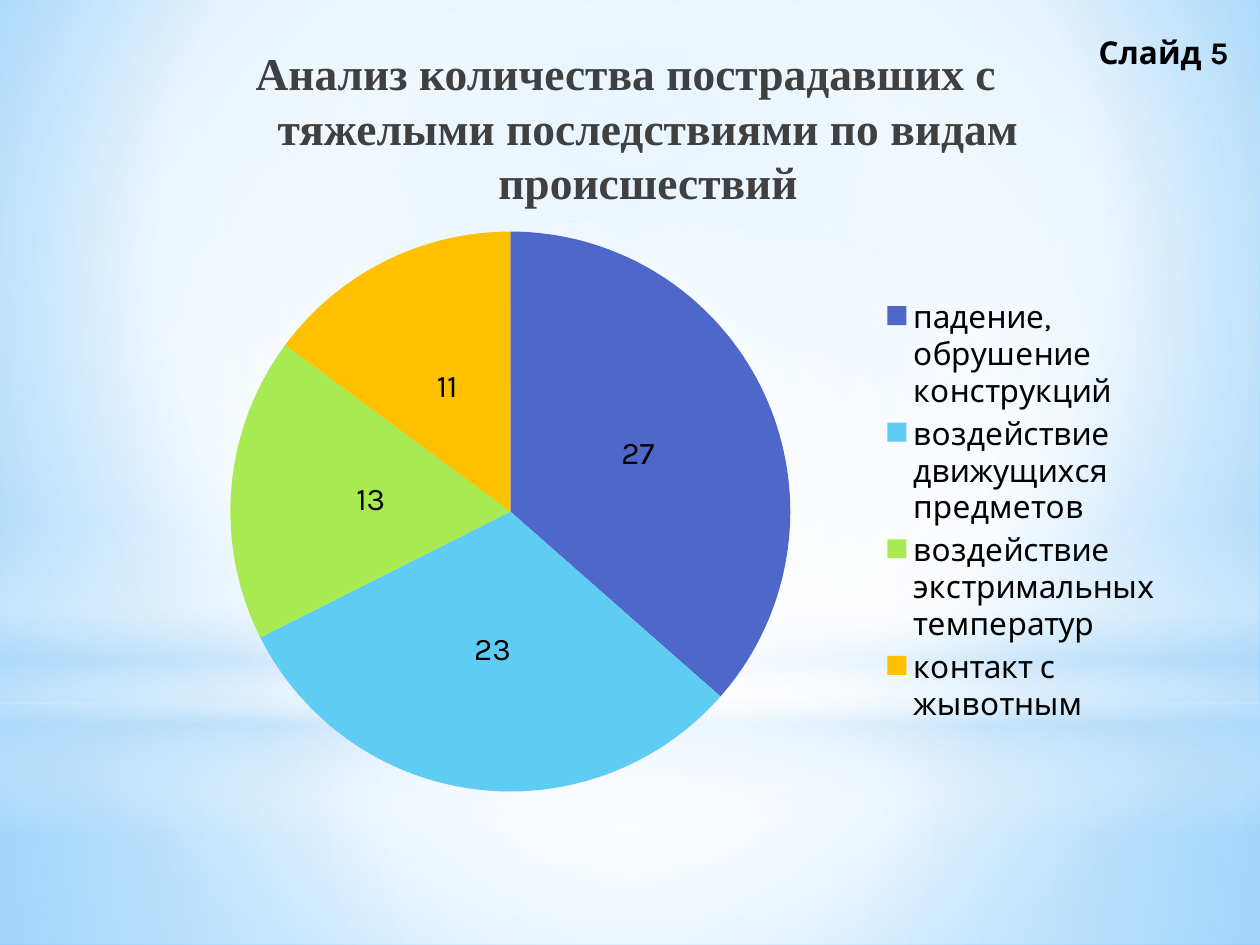
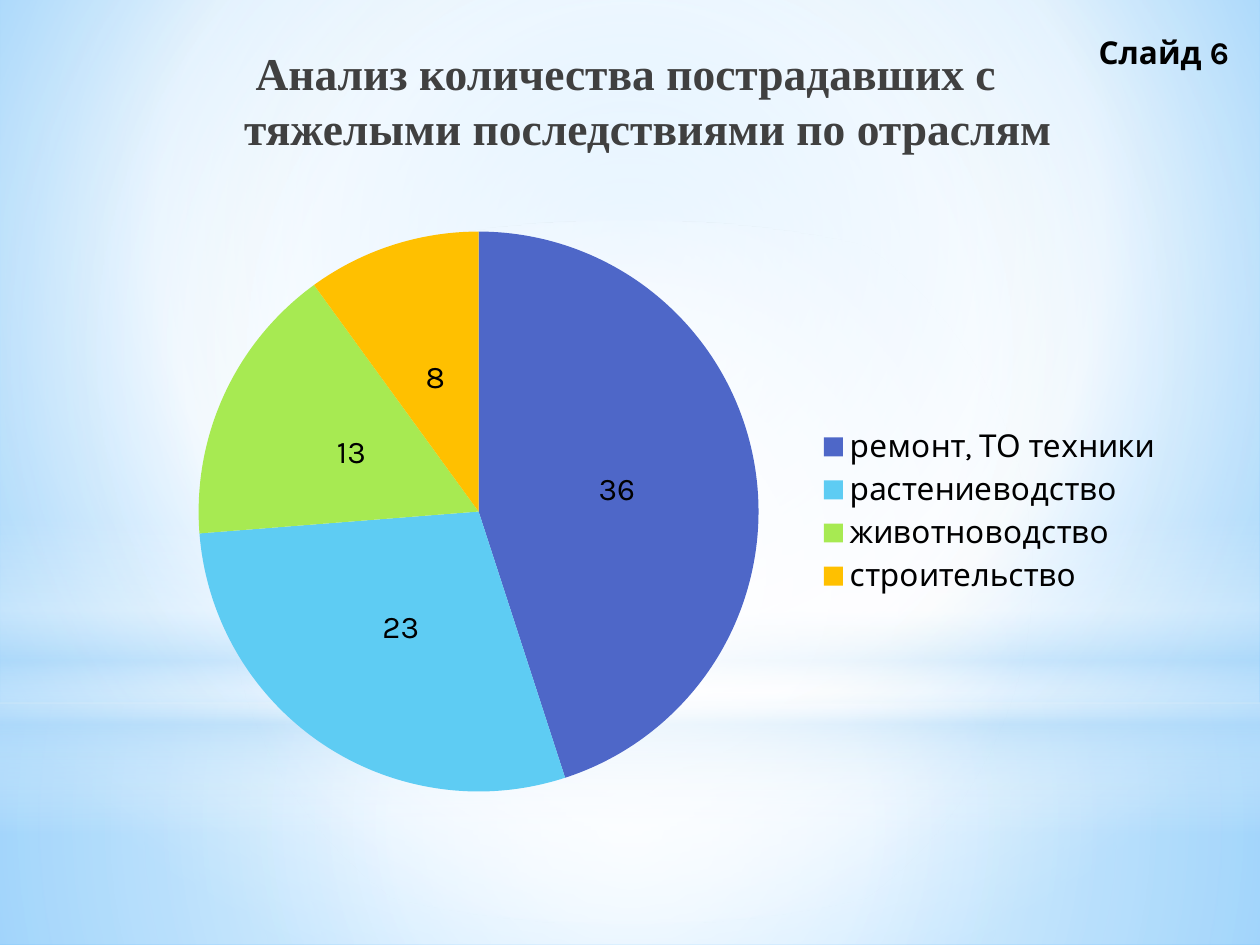
from pptx import Presentation
from pptx.chart.data import CategoryChartData
from pptx.dml.color import RGBColor
from pptx.enum.chart import XL_CHART_TYPE, XL_LABEL_POSITION, XL_LEGEND_POSITION
from pptx.enum.shapes import MSO_SHAPE
from pptx.enum.text import MSO_ANCHOR, MSO_AUTO_SIZE, PP_ALIGN
from pptx.oxml import parse_xml
from pptx.oxml.ns import nsdecls, qn
from pptx.util import Inches, Pt

PIE = XL_CHART_TYPE.PIE
MID = XL_LABEL_POSITION.CENTER
RIGHT = XL_LEGEND_POSITION.RIGHT
RECT, OVAL = MSO_SHAPE.RECTANGLE, MSO_SHAPE.OVAL

# Content
HEAD = "Анализ количества пострадавших с тяжелыми последствиями по "
SLIDES = [
    {"tag": "Слайд 5", "title": HEAD + "видам происшествий",
     "data": [("падение, обрушение конструкций", 27),
              ("воздействие движущихся предметов", 23),
              ("воздействие экстримальных температур", 13),
              ("контакт с жывотным", 11)]},
    {"tag": "Слайд 6", "title": HEAD + "отраслям",
     "data": [("ремонт, ТО техники", 36), ("растениеводство", 23),
              ("животноводство", 13), ("строительство", 8)]},
]

# Shared style
COLORS = {"text": "000000", "title": "404040", "white": "FFFFFF",
          "haze": "B4DCFA", "sky": "9ED5FF", "deep": "5BB9FF"}
SLICES = ["4E67C8", "5ECCF3", "A7EA52", "FFC000"]
FONT, SERIF = "Karla", "Times New Roman"

# Gradients: stops are (place %, colour, opacity %); focus is left, top, right, bottom %
MIDDLE = (50, 50, 50, 50)
BACK = ([(0, "sky", 100), (60, "white", 100), (100, "deep", 100)], (20, 10, 20, 60))
BANDS = [
    (RECT, (0, 5.58, 10, 1.92),
     [(0, "white", 91), (37, "white", 76), (100, "haze", 79)], MIDDLE),
    (RECT, (0, 0, 10, 5.58),
     [(0, "white", 89), (48, "white", 62), (100, "haze", 79)], MIDDLE),
    (RECT, (0, 4.12, 10, 2.5),
     [(0, "white", 0), (29, "white", 30), (45, "haze", 40),
      (55, "white", 26), (65, "haze", 60), (100, "white", 0)], None),
    (OVAL, (0, 1.75, 10, 5.58), [(0, "white", 100), (56, "white", 0)], MIDDLE),
]


def box(*sizes):
    return [Inches(n) for n in sizes]


def set_font(font, name, size, color, bold=False):
    font.name, font.size, font.bold = name, Pt(size), bold
    font.color.rgb = RGBColor.from_string(COLORS[color])


def set_grad(fill, parent, stops, focus):
    """Swap a solid fill for a gradient: round with a focus, else top to bottom."""
    fill.solid()
    marks = "".join(
        f'<a:gs pos="{at * 1000}"><a:srgbClr val="{COLORS[color]}">'
        f'<a:alpha val="{alpha * 1000}"/></a:srgbClr></a:gs>'
        for at, color, alpha in stops)
    if focus:
        sides = " ".join(f'{k}="{v * 1000}"' for k, v in zip("ltrb", focus))
        way = f'<a:path path="circle"><a:fillToRect {sides}/></a:path>'
    else:
        way = '<a:lin ang="5400000" scaled="0"/>'
    grad = parse_xml(f'<a:gradFill {nsdecls("a")} rotWithShape="1">'
                     f'<a:gsLst>{marks}</a:gsLst>{way}</a:gradFill>')
    parent.replace(parent.find(qn("a:solidFill")), grad)


def add_back(layout, slide):
    """Draw the backdrop and move it into the layout, behind all else."""
    fill = layout.background.fill
    fill.solid()
    set_grad(fill, next(layout.element.iter(qn("p:bgPr"))), *BACK)
    for i, (kind, place, stops, focus) in enumerate(BANDS):
        band = slide.shapes.add_shape(kind, *box(*place))
        band.shadow.inherit = False
        band.line.fill.background()
        set_grad(band.fill, band.element.spPr, stops, focus)
        layout.shapes.element.insert(2 + i, band.element)


def add_title(slide, text):
    title = slide.shapes.title
    title.left, title.top, title.width, title.height = box(1.41, 0.31, 7.12, 1.09)
    frame = title.text_frame
    frame.text = text
    frame.auto_size = MSO_AUTO_SIZE.NONE
    frame.vertical_anchor = MSO_ANCHOR.TOP
    para = frame.paragraphs[0]
    para.alignment = PP_ALIGN.CENTER
    set_font(para.font, SERIF, 26, "title", True)
    props = para._p.get_or_add_pPr()
    props.set("marL", str(Inches(0.35)))
    props.set("indent", str(-Inches(0.35)))


def add_pie(slide, rows):
    data = CategoryChartData()
    data.categories = [name for name, _ in rows]
    data.add_series("Series 1", [count for _, count in rows])
    chart = slide.shapes.add_chart(PIE, *box(1.14, 1.7, 8.19, 4.72), data).chart
    set_font(chart.font, FONT, 18, "text")
    chart.has_title = False
    chart.has_legend = True
    chart.legend.position = RIGHT
    chart.legend.include_in_layout = False
    plot = chart.plots[0]
    plot.vary_by_categories = True
    plot.has_data_labels = True
    plot.data_labels.show_value = True
    plot.data_labels.position = MID
    for i, color in enumerate(SLICES):
        fill = plot.series[0].points[i].format.fill
        fill.solid()
        fill.fore_color.rgb = RGBColor.from_string(color)


def add_tag(slide, text):
    frame = slide.shapes.add_textbox(*box(8.62, 0.21, 1.38, 0.4)).text_frame
    frame.word_wrap = True
    frame.auto_size = MSO_AUTO_SIZE.SHAPE_TO_FIT_TEXT
    frame.text = text
    set_font(frame.paragraphs[0].font, FONT, 18, "text", True)


def main():
    deck = Presentation()
    deck.slide_width, deck.slide_height = box(10, 7.5)
    layout = deck.slide_layouts[5]
    for i, item in enumerate(SLIDES):
        slide = deck.slides.add_slide(layout)
        if i == 0:
            add_back(layout, slide)
        add_title(slide, item["title"])
        add_pie(slide, item["data"])
        add_tag(slide, item["tag"])
    deck.save("out.pptx")


if __name__ == "__main__":
    main()
